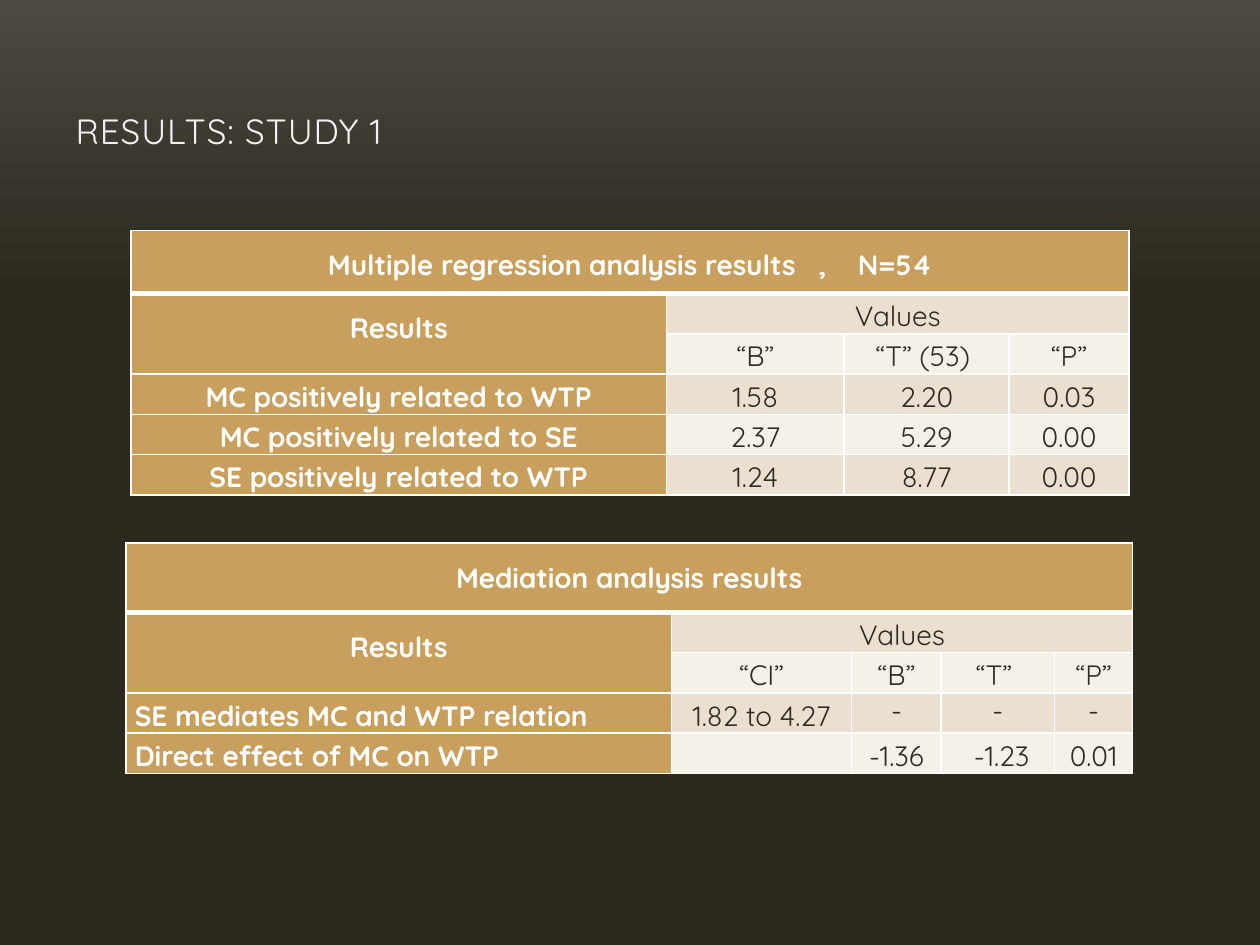
from copy import deepcopy

from lxml import etree
from pptx import Presentation
from pptx.dml.color import RGBColor
from pptx.enum import text
from pptx.oxml import ns
from pptx.util import Inches, Pt

FONT = "Quicksand"
WHITE = RGBColor(0xFF, 0xFF, 0xFF)
TITLE_GREY = RGBColor(0xF2, 0xF2, 0xF2)
INK = RGBColor(0x2F, 0x2B, 0x20)
TAN = RGBColor(0xC8, 0x9F, 0x5D)
BANDS = (RGBColor(0xF5, 0xF0, 0xEA), RGBColor(0xEB, 0xDF, 0xD2))
BACKDROP = (
    (0, RGBColor(0x4C, 0x49, 0x43)),
    (0.31, RGBColor(0x2D, 0x29, 0x1F)),
    (1, RGBColor(0x2B, 0x27, 0x1D)),
)
ROW_HEIGHT = 0.32
CELL_FORMAT = {
    "margin_left": Inches(0.07),
    "margin_right": Inches(0.07),
    "margin_top": 0,
    "margin_bottom": 0,
}

REGRESSION = [
    ["Multiple regression analysis results   ,    N=54", "", "", ""],
    ["Results", "Values", "", ""],
    ["", "“B”", "“T” (53) ", "“P”"],
    ["MC positively related to WTP", "1.58", "2.20", "0.03"],
    ["MC positively related to SE", "2.37", "5.29", "0.00"],
    ["SE positively related to WTP", "1.24", "8.77", "0.00"],
]
MEDIATION = [
    ["Mediation analysis results", "", "", "", ""],
    ["Results", "Values", "", "", ""],
    ["", "“CI”", "“B”", "“T” ", "“P”"],
    ["SE mediates MC and WTP relation", "1.82 to 4.27", "-", "-", "-"],
    ["Direct effect of MC on WTP", "", "-1.36", " -1.23", "0.01"],
]


def apply_format(target, values):
    """Set every attribute in values on the target."""
    for name, value in values.items():
        setattr(target, name, value)


def paint_background(page):
    """Fill the page with the downward gradient."""
    fill = page.background.fill
    fill.gradient()
    fill.gradient_angle = 270
    stop_list = page.element.find(".//" + ns.qn("a:gsLst"))
    stop_list.append(deepcopy(stop_list[0]))
    for stop, (position, color) in zip(fill.gradient_stops, BACKDROP):
        stop.position = position
        stop.color.rgb = color


def add_title(page, wording, left, top, width, height):
    """Place and format the title placeholder."""
    title = page.shapes.title
    apply_format(title, {"left": Inches(left), "top": Inches(top),
                         "width": Inches(width), "height": Inches(height)})
    apply_format(title.text_frame, {"vertical_anchor": text.MSO_ANCHOR.BOTTOM,
                                    "auto_size": text.MSO_AUTO_SIZE.NONE})
    para = title.text_frame.paragraphs[0]
    para.alignment = text.PP_ALIGN.LEFT
    span = para.add_run()
    span.text = wording
    apply_format(span.font, {"name": FONT, "size": Pt(20)})
    span.font.color.rgb = TITLE_GREY
    span.font._element.set("spc", "50")


def add_borders(cell, widths):
    """Draw white borders of the given point widths, keyed by side."""
    properties = cell._tc.get_or_add_tcPr()
    for side, width in widths.items():
        line = etree.SubElement(properties, ns.qn(f"a:ln{side}"), w=str(Pt(width)))
        solid = etree.SubElement(line, ns.qn("a:solidFill"))
        etree.SubElement(solid, ns.qn("a:srgbClr"), val=str(WHITE))


def fill_cell(cell, wording, row, column, label_align):
    """Style one cell by its row and column and write its wording."""
    heading = row == 0 or column == 0
    add_borders(cell, {"L": 1, "R": 1, "T": 3 if row == 1 else 1,
                       "B": 3 if row == 0 else 1})
    apply_format(cell, CELL_FORMAT)
    cell.fill.solid()
    cell.fill.fore_color.rgb = TAN if heading else BANDS[row % 2]
    if not wording:
        return
    para = cell.text_frame.paragraphs[0]
    is_label = column == 0 and row > 2
    para.alignment = label_align if is_label else text.PP_ALIGN.CENTER
    if wording != "-":
        para.line_spacing = 1.5 if heading and not is_label else 1.15
    span = para.add_run()
    span.text = wording
    apply_format(span.font, {"name": FONT, "size": Pt(16), "bold": heading})
    span.font.color.rgb = WHITE if heading else INK


def add_results_table(page, rows, left, top, widths, title_height, label_align):
    """Add a results table with its merged title, label and value headings."""
    heights = [title_height] + [ROW_HEIGHT] * (len(rows) - 1)
    table = page.shapes.add_table(
        len(rows), len(widths), Inches(left), Inches(top),
        Inches(sum(widths)), Inches(sum(heights))).table
    for column, width in zip(table.columns, widths):
        column.width = Inches(width)
    for line, height in zip(table.rows, heights):
        line.height = Inches(height)
    for row, wordings in enumerate(rows):
        for column, wording in enumerate(wordings):
            fill_cell(table.cell(row, column), wording, row, column, label_align)
    last = len(widths) - 1
    table.cell(0, 0).merge(table.cell(0, last))
    table.cell(1, 0).merge(table.cell(2, 0))
    table.cell(1, 1).merge(table.cell(1, last))


def main():
    """Build the results slide and save it."""
    deck = Presentation()
    apply_format(deck, {"slide_width": Inches(10), "slide_height": Inches(7.5)})
    page = deck.slides.add_slide(deck.slide_layouts[5])
    paint_background(page)
    add_title(page, "RESULTS: STUDY 1", 0.5, 0, 9, 1.25)
    add_results_table(page, REGRESSION, 1.04, 1.83, [4.25, 1.41, 1.31, 0.95],
                      0.5, text.PP_ALIGN.CENTER)
    add_results_table(page, MEDIATION, 1, 4.31, [4.33, 1.43, 0.71, 0.9, 0.62],
                      0.55, text.PP_ALIGN.LEFT)
    deck.save("out.pptx")


if __name__ == "__main__":
    main()
